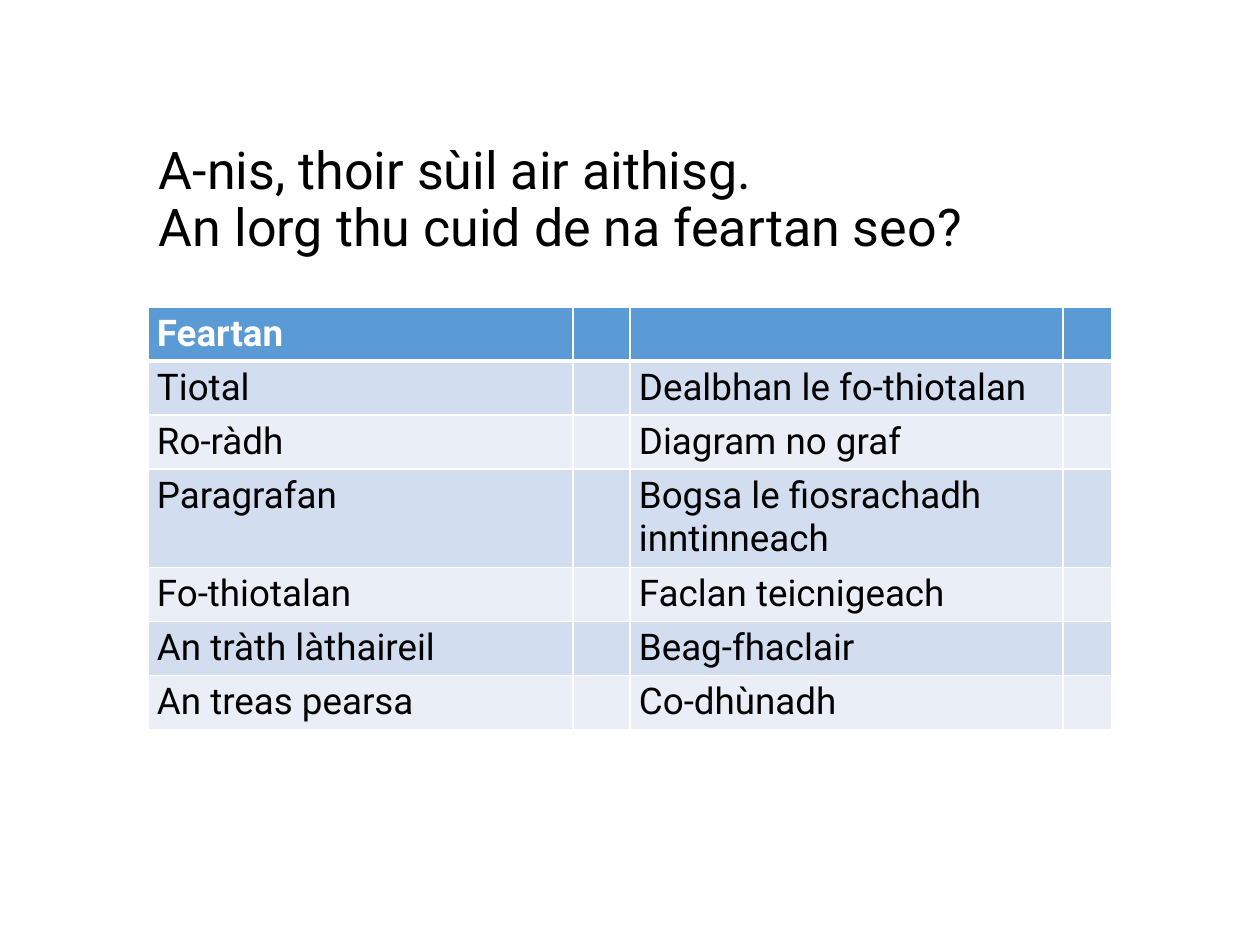
from lxml.etree import SubElement
from pptx import Presentation
from pptx.dml.color import RGBColor as Color
from pptx.enum.text import MSO_ANCHOR as Anchor
from pptx.oxml.ns import qn
from pptx.util import Emu, Pt

PX = 914400 // 126
FONT = "Roboto"
COLORS = {
    "ink": "000000",
    "paper": "FFFFFF",
    "header": "5B9BD5",
    "odd": "D2DEEF",
    "even": "EAEFF7",
}
TITLE = ["A-nis, thoir sùil air aithisg.", "An lorg thu cuid de na feartan seo?"]
FEATURES = [
    ("Feartan", ""),
    ("Tiotal", "Dealbhan le fo-thiotalan"),
    ("Ro-ràdh", "Diagram no graf"),
    ("Paragrafan", "Bogsa le fiosrachadh inntinneach"),
    ("Fo-thiotalan", "Faclan teicnigeach"),
    ("An tràth làthaireil", "Beag-fhaclair"),
    ("An treas pearsa", "Co-dhùnadh"),
]
COLUMN_WIDTHS = [425, 57, 433, 49]
ROW_HEIGHTS = [53, 53, 53, 98, 53, 53, 53]


def px(length):
    return Emu(length * PX)


def style_font(para, size, color, bold=False):
    font = para.font
    font.name = FONT
    font.size = Pt(size)
    font.bold = bold
    font.color.rgb = Color.from_string(COLORS[color])


def set_margins(target, side, end):
    target.margin_left = target.margin_right = px(side)
    target.margin_top = target.margin_bottom = px(end)


def add_title(page, left, top, width, height):
    box = page.shapes.add_textbox(px(left), px(top), px(width), px(height))
    frame = box.text_frame
    frame.word_wrap = True
    frame.vertical_anchor = Anchor.TOP
    set_margins(frame, 11, 9)
    para = frame.paragraphs[0]
    para.text = "\v".join(TITLE)
    para.line_spacing = 0.9
    style_font(para, 29.7, "ink")


def add_borders(cell, bottom_width):
    properties = cell._tc.get_or_add_tcPr()
    for side, width in (("L", 1), ("R", 1), ("T", 1), ("B", bottom_width)):
        line = SubElement(properties, qn(f"a:ln{side}"), w=str(Pt(width)))
        fill = SubElement(line, qn("a:solidFill"))
        SubElement(fill, qn("a:srgbClr"), val=COLORS["paper"])


def fill_cell(cell, text, row):
    header = row == 0
    fill_color = "header" if header else ("odd" if row % 2 else "even")
    add_borders(cell, 3 if header else 1)
    cell.fill.solid()
    cell.fill.fore_color.rgb = Color.from_string(COLORS[fill_color])
    set_margins(cell, 9, 5)
    cell.text = text
    style_font(cell.text_frame.paragraphs[0], 21, "paper" if header else "ink", header)


def add_feature_table(page, left, top):
    table = page.shapes.add_table(
        len(ROW_HEIGHTS), len(COLUMN_WIDTHS), px(left), px(top),
        px(sum(COLUMN_WIDTHS)), px(sum(ROW_HEIGHTS)),
    ).table
    for column, width in zip(table.columns, COLUMN_WIDTHS):
        column.width = px(width)
    for row, (first, second) in enumerate(FEATURES):
        table.rows[row].height = px(ROW_HEIGHTS[row])
        for column, text in enumerate((first, "", second, "")):
            fill_cell(table.cell(row, column), text, row)


def main():
    deck = Presentation()
    deck.slide_width = px(1260)
    deck.slide_height = px(945)
    page = deck.slides.add_slide(deck.slide_layouts[6])
    add_title(page, 148, 136, 1027, 159)
    add_feature_table(page, 148, 307)
    deck.save("out.pptx")


if __name__ == "__main__":
    main()
